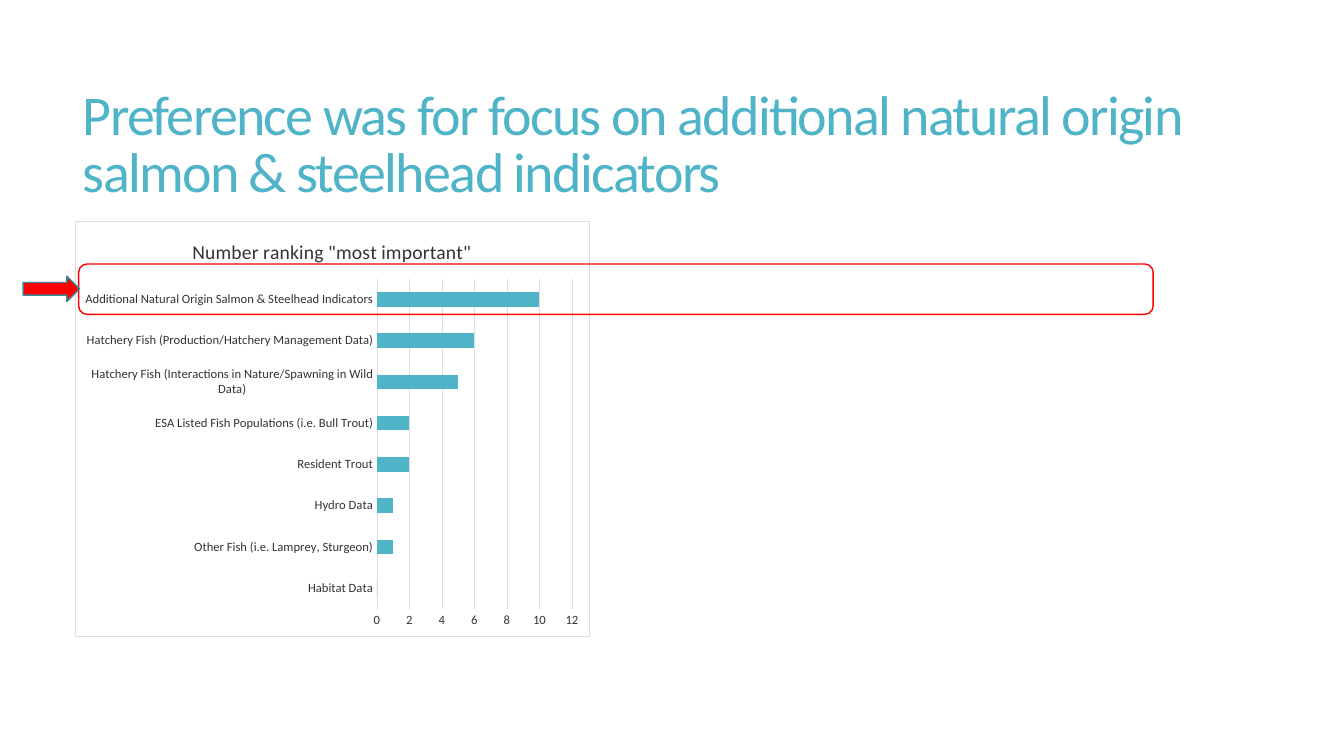
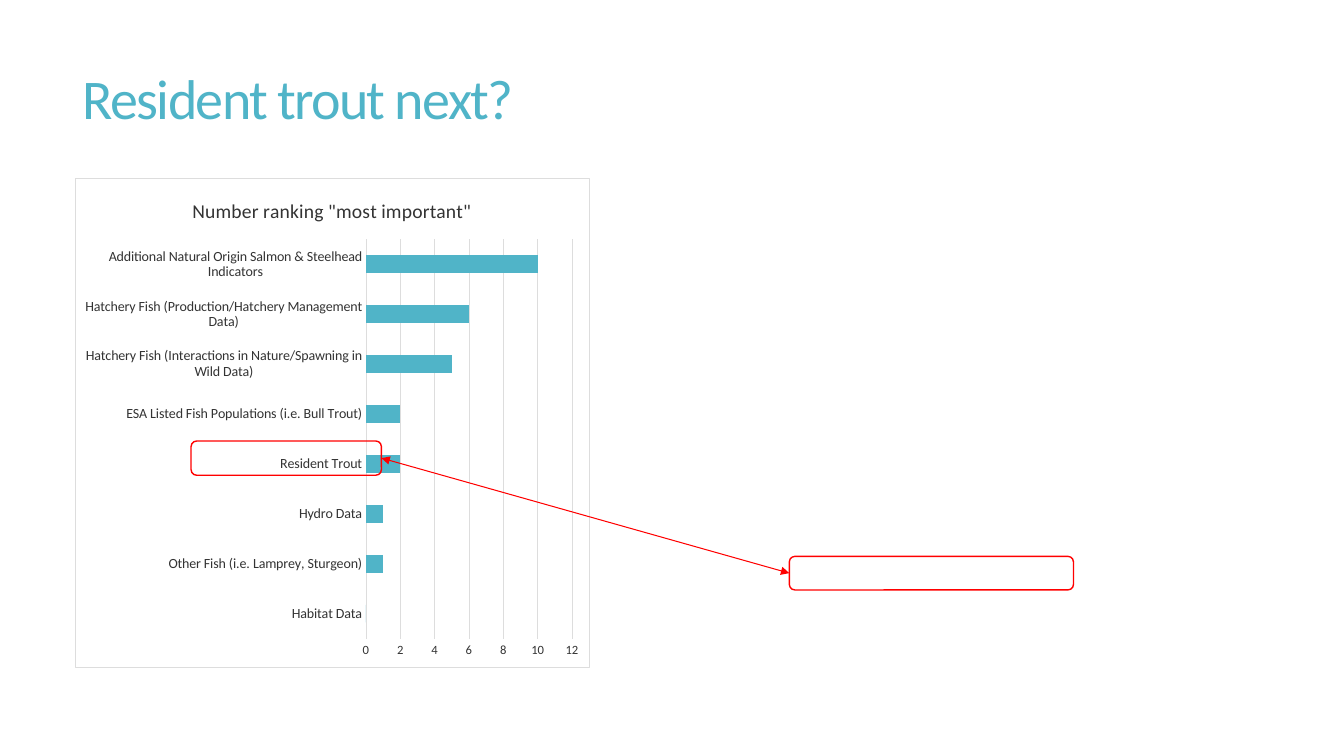
from typing import NamedTuple

from lxml.etree import SubElement
from pptx import Presentation
from pptx.chart.data import CategoryChartData
from pptx.dml.color import RGBColor
from pptx.enum.chart import XL_CHART_TYPE, XL_TICK_MARK
from pptx.enum.shapes import MSO_CONNECTOR, MSO_SHAPE
from pptx.enum.text import MSO_ANCHOR, MSO_AUTO_SIZE, PP_ALIGN
from pptx.oxml import parse_xml
from pptx.oxml.ns import nsdecls, qn
from pptx.util import Pt

FONT = "Calibri"
TEAL = "50B4C8"
DARK_TEAL = "3B8594"
RED = "FF0000"
TEXT = "333333"
GRID = "DDDDDD"
WHITE = "FFFFFF"

CHART_TITLE = 'Number ranking "most important"'
RANKING = {
    "Habitat Data": 0,
    "Other Fish (i.e. Lamprey, Sturgeon)": 1,
    "Hydro Data": 1,
    "Resident Trout": 2,
    "ESA Listed Fish Populations (i.e. Bull Trout)": 2,
    "Hatchery Fish (Interactions in Nature/Spawning in Wild Data)": 5,
    "Hatchery Fish (Production/Hatchery Management Data)": 6,
    "Additional Natural Origin Salmon & Steelhead Indicators": 10,
}


class Box(NamedTuple):
    """A rectangle in points."""
    left: float
    top: float
    width: float
    height: float

    def lengths(self) -> list:
        return [Pt(value) for value in self]


class RankingSlide(NamedTuple):
    title: str
    title_height: float
    chart_top: float
    chart_height: float
    category_size: float
    highlights: list[Box]


SLIDES = [
    RankingSlide(
        "Preference was for focus on additional natural origin salmon & steelhead indicators",
        130.3, 157.7, 296.6, 9, [Box(56.2, 188.6, 767.5, 36)]),
    RankingSlide(
        "Resident trout next?", 67.7, 127.4, 349.2, 10,
        [Box(136.5, 315, 136, 24.5), Box(563.8, 397.4, 203, 24)]),
]
ARROW = Box(16.5, 197.3, 40.3, 18)


def color(value: str) -> RGBColor:
    return RGBColor.from_string(value)


def style_line(line, value: str, width: float) -> None:
    line.color.rgb = color(value)
    line.width = Pt(width)


def style_font(font, size: float, value: str) -> None:
    font.name = FONT
    font.size = Pt(size)
    font.color.rgb = color(value)


def set_title(slide, text: str, height: float) -> None:
    title = slide.shapes.title
    title.left, title.top, title.width, title.height = Box(52, 39.6, 848, height).lengths()
    frame = title.text_frame
    frame.text = text
    frame.auto_size = MSO_AUTO_SIZE.NONE
    frame.word_wrap = True
    frame.vertical_anchor = MSO_ANCHOR.MIDDLE
    paragraph = frame.paragraphs[0]
    paragraph.alignment = PP_ALIGN.LEFT
    paragraph.line_spacing = 0.85
    run = paragraph.runs[0]
    style_font(run.font, 40, TEAL)
    run.font._element.set("spc", "-120")


def frame_chart(chart) -> None:
    """Give the chart area its fill and thin border."""
    chart_space = chart._chartSpace
    properties = parse_xml(
        f'<c:spPr {nsdecls("c", "a")}>'
        f'<a:solidFill><a:srgbClr val="{WHITE}"/></a:solidFill>'
        f'<a:ln w="{Pt(0.25)}"><a:solidFill><a:srgbClr val="{GRID}"/></a:solidFill></a:ln>'
        "</c:spPr>")
    chart_space.find(qn("c:chart")).addnext(properties)


def style_axis(axis, size: float) -> None:
    axis.major_tick_mark = XL_TICK_MARK.NONE
    axis.minor_tick_mark = XL_TICK_MARK.NONE
    style_font(axis.tick_labels.font, size, TEXT)


def add_ranking_chart(slide, box: Box, category_size: float) -> None:
    data = CategoryChartData()
    data.categories = list(RANKING)
    data.add_series("Series 1", list(RANKING.values()))
    chart = slide.shapes.add_chart(
        XL_CHART_TYPE.BAR_CLUSTERED, *box.lengths(), data).chart
    style_font(chart.font, 10, TEXT)
    frame_chart(chart)
    chart.has_legend = False
    chart.has_title = True
    chart.chart_title.include_in_layout = False
    title_frame = chart.chart_title.text_frame
    title_frame.text = CHART_TITLE
    title_font = title_frame.paragraphs[0].runs[0].font
    style_font(title_font, 14, TEXT)
    title_font.bold = False

    style_axis(chart.category_axis, category_size)
    style_line(chart.category_axis.format.line, GRID, 0.25)
    style_axis(chart.value_axis, 9)
    chart.value_axis.format.line.fill.background()
    style_line(chart.value_axis.major_gridlines.format.line, GRID, 0.25)

    plot = chart.plots[0]
    plot.gap_width = 182
    plot.vary_by_categories = False
    fill = plot.series[0].format.fill
    fill.solid()
    fill.fore_color.rgb = color(TEAL)


def add_highlight(slide, box: Box):
    shape = slide.shapes.add_shape(MSO_SHAPE.ROUNDED_RECTANGLE, *box.lengths())
    shape.shadow.inherit = False
    shape.fill.background()
    style_line(shape.line, RED, 1)
    return shape


def add_block_arrow(slide, box: Box) -> None:
    shape = slide.shapes.add_shape(MSO_SHAPE.RIGHT_ARROW, *box.lengths())
    shape.shadow.inherit = False
    shape.fill.solid()
    shape.fill.fore_color.rgb = color(RED)
    style_line(shape.line, DARK_TEAL, 1)


def join_highlights(slide, first, second) -> None:
    """Draw a double-headed arrow from the first box's right to the second's left."""
    connector = slide.shapes.add_connector(MSO_CONNECTOR.STRAIGHT, 0, 0, 0, 0)
    connector.begin_connect(first, 3)
    connector.end_connect(second, 1)
    style_line(connector.line, RED, 0.75)
    line = connector.line._get_or_add_ln()
    for end in ("a:headEnd", "a:tailEnd"):
        SubElement(line, qn(end)).set("type", "triangle")
    SubElement(connector._element.spPr, qn("a:effectLst"))


def add_ranking_slide(presentation, content: RankingSlide):
    """Add the title, chart and highlights; return the slide and its highlights."""
    slide = presentation.slides.add_slide(presentation.slide_layouts[5])
    set_title(slide, content.title, content.title_height)
    chart_box = Box(53.5, content.chart_top, 367.2, content.chart_height)
    add_ranking_chart(slide, chart_box, content.category_size)
    return slide, [add_highlight(slide, box) for box in content.highlights]


def main() -> None:
    presentation = Presentation()
    presentation.slide_width, presentation.slide_height = Pt(960), Pt(540)
    preference, trout = SLIDES
    slide, _ = add_ranking_slide(presentation, preference)
    add_block_arrow(slide, ARROW)
    slide, highlights = add_ranking_slide(presentation, trout)
    join_highlights(slide, *highlights)
    presentation.save("out.pptx")


if __name__ == "__main__":
    main()
